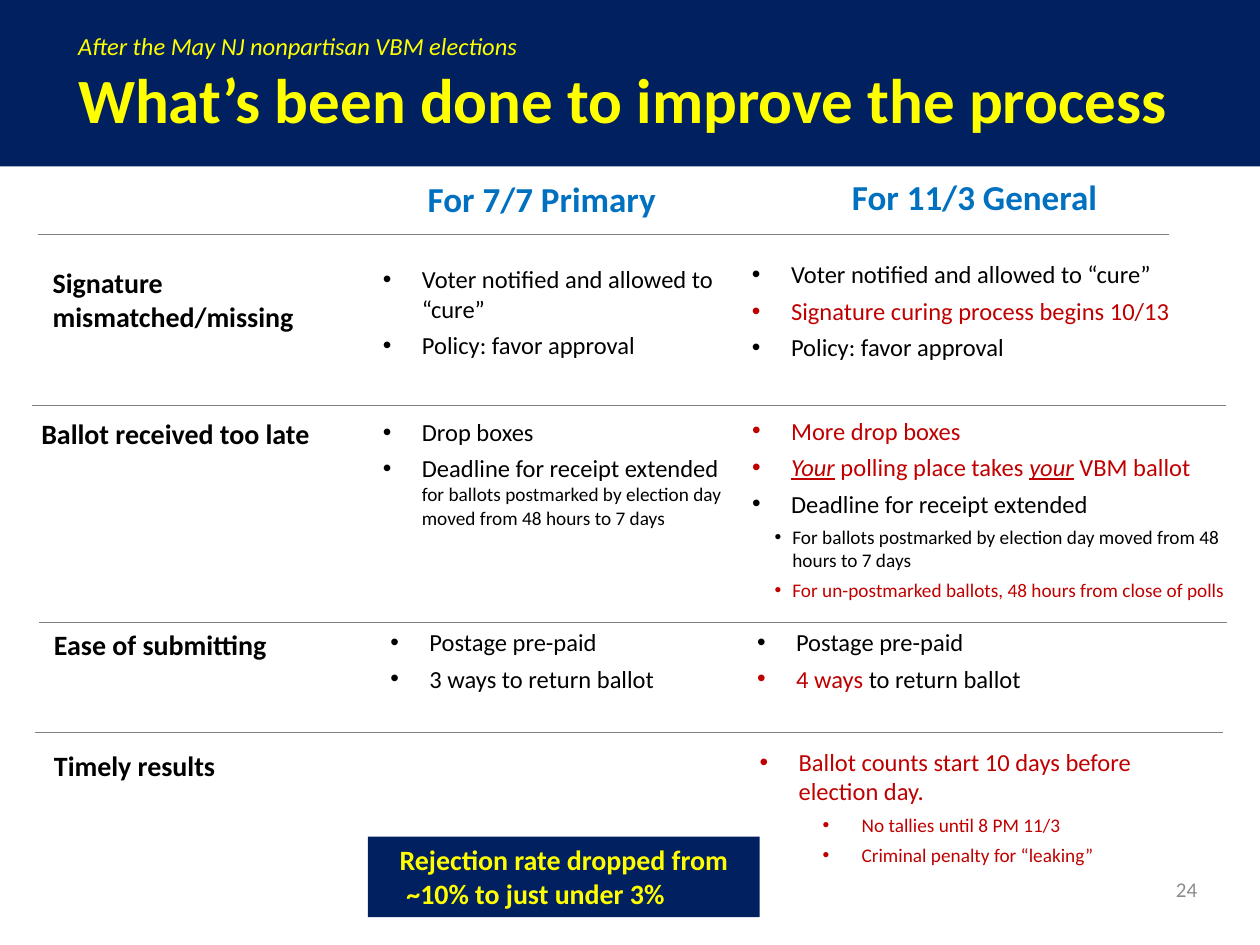
import pptx
import pptx.util
import pptx.dml.color
import pptx.enum.shapes
import pptx.enum.text
import pptx.oxml
import pptx.oxml.ns
import lxml.etree

Inches, Pt = pptx.util.Inches, pptx.util.Pt
RGBColor = pptx.dml.color.RGBColor
ALIGN = pptx.enum.text.PP_ALIGN
ANCHOR = pptx.enum.text.MSO_ANCHOR
AUTO_SIZE = pptx.enum.text.MSO_AUTO_SIZE

NAVY = RGBColor(0x00, 0x20, 0x60)
YELLOW = RGBColor(0xFF, 0xFF, 0x00)
BLUE = RGBColor(0x00, 0x70, 0xC0)
RED = RGBColor(0xC0, 0x00, 0x00)
BLACK = RGBColor(0x00, 0x00, 0x00)
GRAY = RGBColor(0x80, 0x80, 0x80)
NUMBER_GRAY = RGBColor(0x8C, 0x8C, 0x8C)

HEADING = {"size": Pt(20), "bold": True, "color": BLUE}
LABEL = {"size": Pt(16), "bold": True, "color": BLACK}
BODY = {"size": Pt(14), "color": BLACK}
CHANGED = {**BODY, "color": RED}
STRESSED = {**CHANGED, "italic": True, "underline": True}
DETAIL = {"size": Pt(11), "color": BLACK}
CHANGED_DETAIL = {**DETAIL, "color": RED}
CALLOUT = {"size": Pt(16), "bold": True, "color": YELLOW}

MAIN = (0, 0.31, 0.31)
NEAR = (1, 0.32, 0.14)
DEEP = (1, 0.81, 0.31)

TITLE = [
    [("After the May NJ nonpartisan VBM elections",
      {"size": Pt(14), "bold": False, "italic": True, "color": YELLOW})],
    [("What’s been done to improve the process",
      {"size": Pt(36), "bold": True, "color": YELLOW})],
]
HEADINGS = [
    ((2.74, 1.36, 3.12, 0.44), "For 7/7 Primary"),
    ((6.06, 1.34, 3.35, 0.44), "For 11/3 General"),
]
LABELS = [
    ((0.32, 2.06, 2.35, 0.64), "Signature mismatched/missing"),
    ((0.23, 3.26, 2.35, 0.37), "Ballot received too late"),
    ((0.33, 4.93, 2.35, 0.37), "Ease of submitting"),
    ((0.33, 5.89, 2.35, 0.37), "Timely results"),
]
LISTS = [
    ((2.94, 2.05, 3.01, 0.86), [
        (MAIN, [("Voter notified and allowed to “cure”", BODY)]),
        (MAIN, [("Policy: favor approval", BODY)]),
    ]),
    ((5.87, 2.01, 3.63, 0.92), [
        (MAIN, [("Voter notified and allowed to “cure”", BODY)]),
        (MAIN, [("Signature curing process begins 10/13", CHANGED)]),
        (MAIN, [("Policy: favor approval", BODY)]),
    ]),
    ((2.94, 3.26, 3.04, 1.03), [
        (MAIN, [("Drop boxes", BODY)]),
        (MAIN, [("Deadline for receipt extended ", BODY),
                ("for ballots postmarked by election day moved from 48 hours to 7 days", DETAIL)]),
    ]),
    ((5.87, 3.25, 3.95, 1.59), [
        (MAIN, [("More drop boxes", CHANGED)]),
        (MAIN, [("Your", STRESSED), (" polling place takes ", CHANGED),
                ("your", STRESSED), (" VBM ballot", CHANGED)]),
        (MAIN, [("Deadline for receipt extended", BODY)]),
        (NEAR, [("For ballots postmarked by election day moved from 48 hours to 7 days", DETAIL)]),
        (NEAR, [("For un-postmarked ballots, 48 hours from close of polls", CHANGED_DETAIL)]),
    ]),
    ((3, 4.93, 3.36, 0.63), [
        (MAIN, [("Postage pre-paid", BODY)]),
        (MAIN, [("3 ways to return ballot", BODY)]),
    ]),
    ((5.91, 4.93, 3.75, 0.63), [
        (MAIN, [("Postage pre-paid", BODY)]),
        (MAIN, [("4 ways ", CHANGED), ("to return ballot", BODY)]),
    ]),
    ((5.93, 5.88, 3.75, 1.05), [
        (MAIN, [("Ballot counts start 10 days before election day.", CHANGED)]),
        (DEEP, [("No tallies until 8 PM 11/3", CHANGED_DETAIL)]),
        (DEEP, [("Criminal penalty for “leaking”", CHANGED_DETAIL)]),
    ]),
]
RULES = [(0.3, 9.28, 1.86), (0.25, 9.73, 3.22), (0.31, 9.74, 4.94), (0.28, 9.71, 5.81)]


def inches(values):
    return [Inches(value) for value in values]


def add_spans(para, spans):
    for text, style in spans:
        span = para.add_run()
        span.text = text
        span.font.name = "Calibri"
        for name, value in style.items():
            if name == "color":
                span.font.color.rgb = value
            else:
                setattr(span.font, name, value)


def add_paragraphs(frame, paragraphs, align=ALIGN.LEFT):
    for index, spans in enumerate(paragraphs):
        para = frame.add_paragraph() if index else frame.paragraphs[0]
        para.alignment = align
        add_spans(para, spans)


def add_box(page, place, paragraphs, align=ALIGN.LEFT):
    frame = page.shapes.add_textbox(*inches(place)).text_frame
    frame.word_wrap = True
    frame.auto_size = AUTO_SIZE.SHAPE_TO_FIT_TEXT
    add_paragraphs(frame, paragraphs, align)
    return frame


def add_bullet(para, indent):
    para.level, left, hanging = indent
    properties = para._p.get_or_add_pPr()
    properties.set("marL", str(Inches(left)))
    properties.set("indent", str(-Inches(hanging)))
    font = lxml.etree.SubElement(properties, pptx.oxml.ns.qn("a:buFont"))
    font.set("typeface", "Arial")
    bullet = lxml.etree.SubElement(properties, pptx.oxml.ns.qn("a:buChar"))
    bullet.set("char", "•")


def add_list(page, place, items):
    frame = add_box(page, place, [spans for _, spans in items])
    for index, (para, (indent, _)) in enumerate(zip(frame.paragraphs, items)):
        add_bullet(para, indent)
        if index:
            para.space_before = Pt(4)


def add_block(page, place):
    block = page.shapes.add_shape(pptx.enum.shapes.MSO_SHAPE.RECTANGLE, *inches(place))
    block.shadow.inherit = False
    block.fill.solid()
    block.fill.fore_color.rgb = NAVY
    block.line.fill.background()
    return block


def add_rule(page, left, right, top):
    rule = page.shapes.add_connector(
        pptx.enum.shapes.MSO_CONNECTOR.STRAIGHT, *inches((left, top, right, top)))
    rule.line.color.rgb = GRAY
    rule.line.width = Pt(0.5)
    lxml.etree.SubElement(rule._element.spPr, pptx.oxml.ns.qn("a:effectLst"))


def add_title(page):
    title = page.shapes.title
    title.left, title.top, title.width, title.height = inches((0.52, 0.47, 9.04, 0.75))
    frame = title.text_frame
    frame.auto_size = AUTO_SIZE.NONE
    frame.vertical_anchor = ANCHOR.BOTTOM
    frame.margin_bottom = Inches(0.14)
    add_paragraphs(frame, TITLE)
    page.shapes._spTree.append(title._element)


def main():
    deck = pptx.Presentation()
    deck.slide_width, deck.slide_height = inches((10, 7.5))
    page = deck.slides.add_slide(deck.slide_layouts[5])

    number = add_box(page, (6.22, 6.86, 3.38, 0.4),
                     [[("24", {"size": Pt(12), "color": NUMBER_GRAY})]], ALIGN.RIGHT)
    number.auto_size = AUTO_SIZE.NONE
    number.vertical_anchor = ANCHOR.MIDDLE

    add_block(page, (0, 0, 10, 1.32))
    add_title(page)
    for place, text in HEADINGS:
        add_box(page, place, [[(text, HEADING)]], ALIGN.CENTER)
    for place, text in LABELS:
        add_box(page, place, [[(text, LABEL)]])
    for place, items in LISTS:
        add_list(page, place, items)
    for rule in RULES:
        add_rule(page, *rule)

    callout = add_block(page, (2.92, 6.64, 3.11, 0.64)).text_frame
    callout.word_wrap = True
    callout.vertical_anchor = ANCHOR.TOP
    callout.auto_size = AUTO_SIZE.SHAPE_TO_FIT_TEXT
    add_paragraphs(callout, [[("Rejection rate dropped from ~10% to just under 3%\t", CALLOUT)]],
                   ALIGN.CENTER)
    deck.save("out.pptx")


if __name__ == "__main__":
    main()
